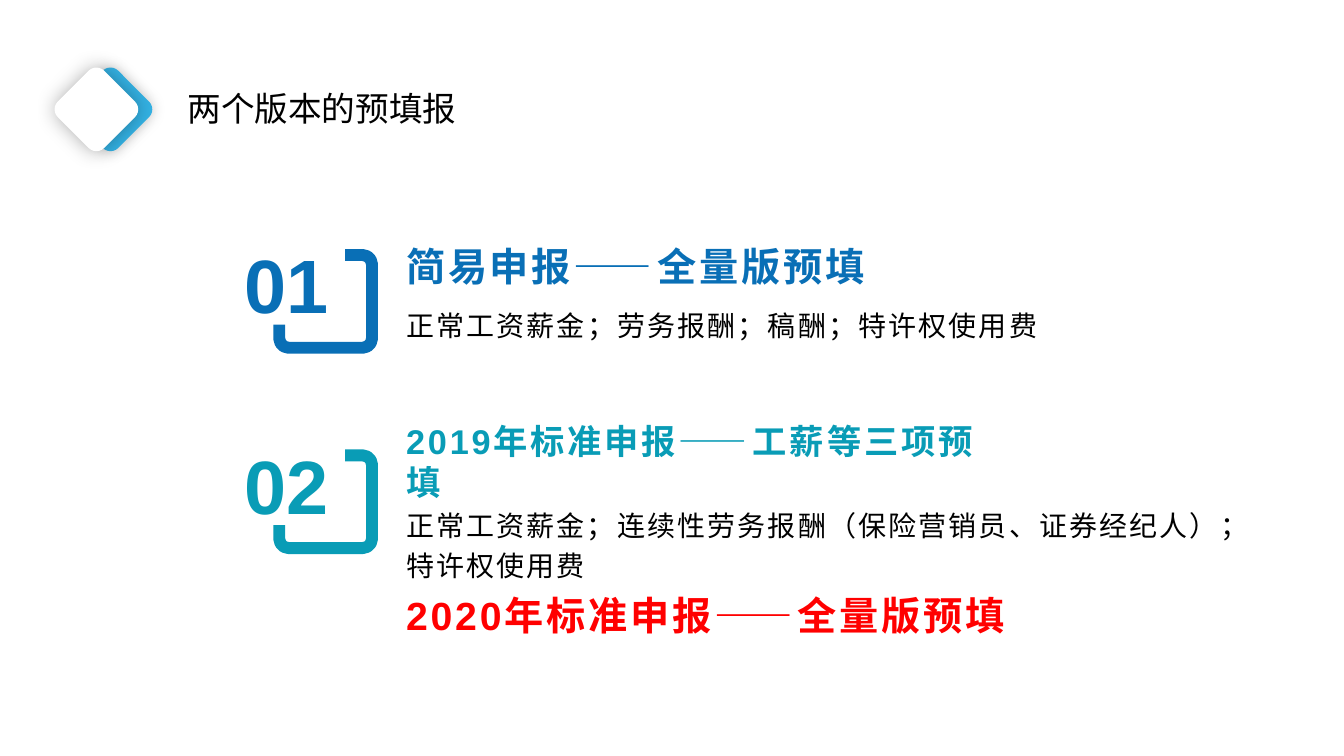
"""Build the slide that compares the two pre-filled tax return versions."""
from dataclasses import dataclass

from lxml.etree import SubElement
from pptx import Presentation
from pptx.dml.color import RGBColor
from pptx.enum.shapes import MSO_SHAPE as SHAPE
from pptx.enum.text import MSO_ANCHOR as ANCHOR, MSO_AUTO_SIZE as FIT, PP_ALIGN as ALIGN
from pptx.oxml.ns import qn
from pptx.util import Emu, Inches, Pt

SLIDE_W, SLIDE_H = Inches(13.333), Inches(7.5)
ROW_STEP = 26.5
TEXT_LEFT = 29.48


@dataclass(frozen=True)
class Theme:
    latin: str = "Arial"
    cjk: str = "Noto Sans CJK SC"
    blue: str = "096FB6"
    teal: str = "099CB6"
    sky: str = "34B2E4"
    red: str = "FF0000"
    black: str = "000000"
    white: str = "FFFFFF"
    number: float = 54
    heading: float = 28
    small_heading: float = 24.5
    title: float = 24
    body: float = 20
    frame: float = 8.5


THEME = Theme()


@dataclass(frozen=True)
class Box:
    """Left, top, width and height in percent of the slide."""
    x: float
    y: float
    w: float
    h: float

    def emu(self) -> tuple:
        return (Emu(int(SLIDE_W * self.x / 100)), Emu(int(SLIDE_H * self.y / 100)),
                Emu(int(SLIDE_W * self.w / 100)), Emu(int(SLIDE_H * self.h / 100)))


@dataclass(frozen=True)
class Line:
    text: str
    size: float
    color: str
    bold: bool = False
    tracking: float = 0
    spacing: float = 1.2
    align: ALIGN = ALIGN.LEFT
    latin: str = THEME.latin


@dataclass(frozen=True)
class Version:
    number: str
    color: str
    heading: Line
    body: tuple
    body_width: float
    body_height: float


@dataclass(frozen=True)
class Diamond:
    x: float
    color: str
    shadow_alpha: int
    shadow_blur: int


def body_line(text: str) -> Line:
    return Line(text, THEME.body, THEME.black, tracking=1.5)


VERSIONS = (
    Version("01", THEME.blue,
            Line("简易申报——全量版预填", THEME.heading, THEME.blue, True, 2),
            (body_line("正常工资薪金；劳务报酬；稿酬；特许权使用费"),), 55.35, 11.2),
    Version("02", THEME.teal,
            Line("2019年标准申报——工薪等三项预填", THEME.small_heading, THEME.teal, True, 2, 1),
            (body_line("正常工资薪金；连续性劳务报酬（保险营销员、证券经纪人）；特许权使用费"),
             Line("2020年标准申报——全量版预填", THEME.heading, THEME.red, True, 2)),
            62.93, 11.33),
)
DIAMONDS = (Diamond(5.78, THEME.sky, 20, 10), Diamond(4.73, THEME.white, 30, 15))


def set_all(obj, values: dict) -> None:
    for name, value in values.items():
        setattr(obj, name, value)


def write(tf, lines: tuple, **frame) -> None:
    set_all(tf, {"word_wrap": True, "auto_size": FIT.NONE, "vertical_anchor": ANCHOR.TOP, **frame})
    for i, line in enumerate(lines):
        p = tf.add_paragraph() if i else tf.paragraphs[0]
        set_all(p, {"alignment": line.align, "line_spacing": line.spacing})
        r = p.add_run()
        r.text = line.text
        set_all(r.font, {"size": Pt(line.size), "bold": line.bold, "name": line.latin})
        r.font.color.rgb = RGBColor.from_string(line.color)
        rpr = r._r.get_or_add_rPr()
        rpr.set("spc", str(int(line.tracking * 100)))
        SubElement(rpr, qn("a:ea")).set("typeface", THEME.cjk)


def add_text(slide, box: Box, lines: tuple, **frame) -> None:
    write(slide.shapes.add_textbox(*box.emu()).text_frame, lines, **frame)


def add_block(slide, kind: SHAPE, box: Box, fill: str = "", line: str = ""):
    sp = slide.shapes.add_shape(kind, *box.emu())
    sp.shadow.inherit = False
    for part, color in ((sp.fill, fill), (sp.line.fill, line)):
        if color:
            part.solid()
            part.fore_color.rgb = RGBColor.from_string(color)
        else:
            part.background()
    return sp


def add_diamond(slide, diamond: Diamond) -> None:
    sp = add_block(slide, SHAPE.ROUNDED_RECTANGLE, Box(diamond.x, 10.13, 4.88, 8.67), diamond.color)
    sp.rotation = 45
    effects = sp._element.spPr.find(qn("a:effectLst"))
    shadow = SubElement(effects, qn("a:outerShdw"), blurRad=str(Pt(diamond.shadow_blur)),
                        dist="0", dir="0", algn="ctr", rotWithShape="0")
    color = SubElement(shadow, qn("a:srgbClr"), val=THEME.black)
    SubElement(color, qn("a:alpha"), val=str(diamond.shadow_alpha * 1000))


def add_version(slide, version: Version, offset: float) -> None:
    frame = add_block(slide, SHAPE.ROUNDED_RECTANGLE, Box(20.78, 33.73 + offset, 6.9, 12.27),
                      line=version.color)
    frame.adjustments[0] = 0.1
    frame.line.width = Pt(THEME.frame)
    label = add_block(slide, SHAPE.RECTANGLE, Box(17.03, 29.73 + offset, 8.63, 13.2), THEME.white)
    number = Line(version.number, THEME.number, version.color, True, align=ALIGN.CENTER)
    write(label.text_frame, (number,), vertical_anchor=ANCHOR.MIDDLE, margin_top=0, margin_bottom=0)
    add_text(slide, Box(TEXT_LEFT, 39.2 + offset, version.body_width, version.body_height),
             version.body)
    add_text(slide, Box(TEXT_LEFT, 30.4 + offset, 45.38, 8.27), (version.heading,),
             vertical_anchor=ANCHOR.MIDDLE)


def add_title(slide) -> None:
    title = slide.shapes.title
    set_all(title, dict(zip(("left", "top", "width", "height"),
                            Box(13.2, 8.27, 23.7, 9.33).emu())))
    line = Line("两个版本的预填报", THEME.title, THEME.black, spacing=1.5, latin=THEME.cjk)
    write(title.text_frame, (line,), auto_size=FIT.SHAPE_TO_FIT_TEXT)


def main() -> None:
    prs = Presentation()
    set_all(prs, {"slide_width": SLIDE_W, "slide_height": SLIDE_H})
    slide = prs.slides.add_slide(prs.slide_layouts[5])
    add_title(slide)
    for i, version in enumerate(VERSIONS):
        add_version(slide, version, i * ROW_STEP)
    for diamond in DIAMONDS:
        add_diamond(slide, diamond)
    prs.save("out.pptx")


if __name__ == "__main__":
    main()
